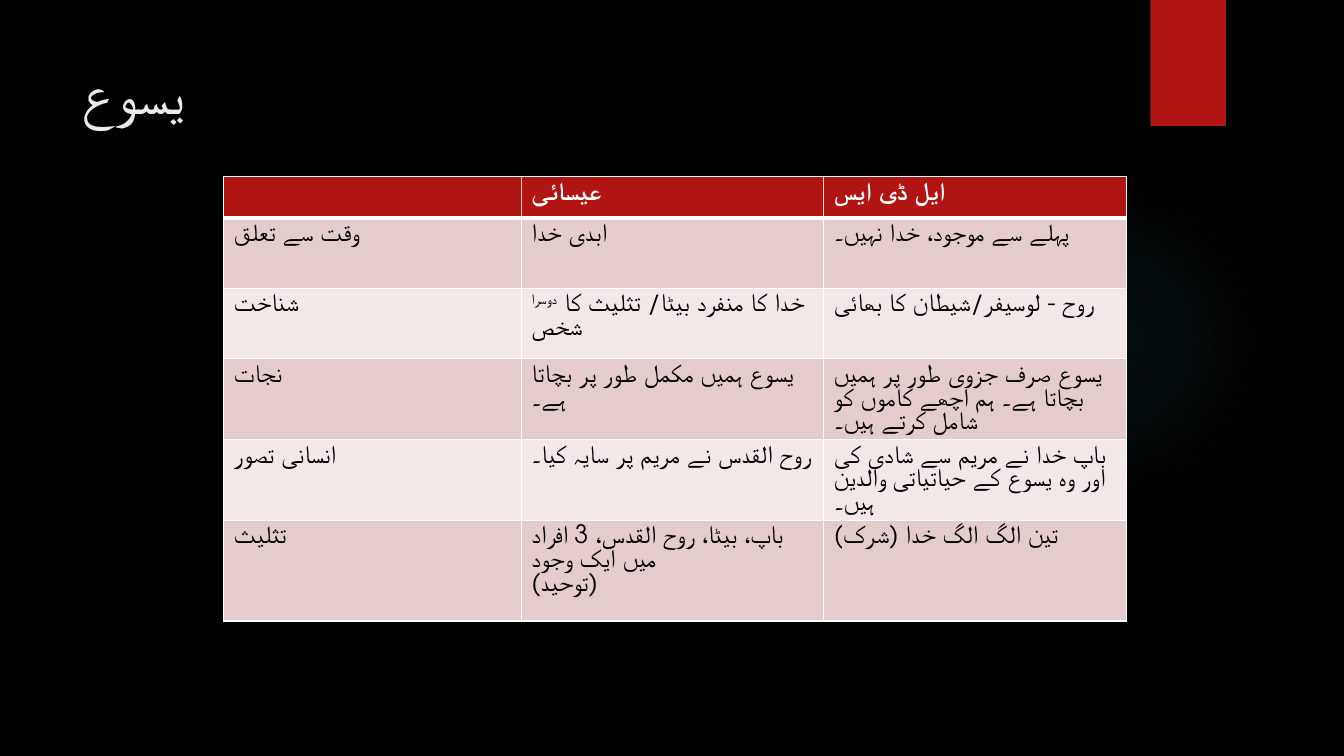
import pptx
import pptx.util
import pptx.dml.color
import pptx.enum.shapes
import pptx.enum.text
import pptx.oxml
import pptx.oxml.ns
from dataclasses import dataclass

TITLE = "یسوع"
# Each cell is a list of paragraphs; each paragraph is a list of (text, superscript) spans or plain strings.
ROWS = [
    ([], [["عیسائی"]], [["ایل ڈی ایس"]]),
    ([["وقت سے تعلق"]], [["ابدی خدا"]], [["پہلے سے موجود، خدا نہیں۔"]]),
    ([["شناخت"]],
     [["خدا کا منفرد بیٹا/ تثلیث کا ", ("دوسرا ", True), "شخص"]],
     [["روح - لوسیفر/شیطان کا بھائی"]]),
    ([["نجات"]],
     [["یسوع ہمیں مکمل طور پر بچاتا ہے۔"]],
     [["یسوع صرف جزوی طور پر ہمیں بچاتا ہے۔ ہم اچھے کاموں کو شامل کرتے ہیں۔"]]),
    ([["انسانی تصور"]],
     [["روح القدس نے مریم پر سایہ کیا۔"]],
     [["باپ خدا نے مریم سے شادی کی اور وہ یسوع کے حیاتیاتی والدین ہیں۔"]]),
    ([["تثلیث"]],
     [["باپ، بیٹا، روح القدس، 3 افراد میں ایک وجود"], ["(توحید)"]],
     [["تین الگ الگ خدا (شرک)"]]),
]
COLUMN_WIDTHS = (2.95, 3, 3)
ROW_HEIGHTS = (0.41, 0.7, 0.7, 0.7, 0.7, 1)
TABLE_LEFT, TABLE_TOP = 2.22, 1.75
TITLE_BOX = (0.71, 0.5, 10.29, 1.53)
GLOW_BOX = (9.41, 1.83, 3.08, 3.08)
TAB_BOX = (11.41, 0, 0.75, 1.25)


@dataclass(frozen=True)
class Theme:
    font: str = "TeX Gyre Adventor"
    title_size: int = 42
    cell_size: int = 18
    background: str = "000000"
    title: str = "EBEBEB"
    accent: str = "B01513"
    glow: str = "50B9C1"
    header_text: str = "FFFFFF"
    body_text: str = "000000"
    border: str = "FFFFFF"
    bands: tuple = ("E4CCCC", "F2E8E7")


THEME = Theme()
GLOW_STOPS = ((0, 7), (36, 6), (69, 0))  # position and opacity, in percent


def inches(values):
    return [pptx.util.Inches(value) for value in values]


def color(code):
    return pptx.dml.color.RGBColor.from_string(code)


def xml(text):
    return pptx.oxml.parse_xml(text.replace(">", " " + pptx.oxml.ns.nsdecls("a") + ">", 1))


def add_span(para, text, size, code, bold=False, superscript=False):
    span = para.add_run()
    span.text = text
    span.font.name = THEME.font
    span.font.size = pptx.util.Pt(size)
    span.font.bold = bold
    span.font.color.rgb = color(code)
    properties = span.font._element
    properties.append(xml(f'<a:cs typeface="{THEME.font}"></a:cs>'))
    if superscript:
        properties.set("baseline", "30000")


def add_panel(page, kind, box):
    panel = page.shapes.add_shape(kind, *inches(box))
    panel.shadow.inherit = False
    panel.line.fill.background()
    panel.fill.solid()
    panel.fill.fore_color.rgb = color(THEME.accent)
    return panel


def add_glow(page):
    glow = add_panel(page, pptx.enum.shapes.MSO_SHAPE.OVAL, GLOW_BOX)
    stops = "".join(
        f'<a:gs pos="{position * 1000}"><a:srgbClr val="{THEME.glow}">'
        f'<a:alpha val="{opacity * 1000}"/></a:srgbClr></a:gs>'
        for position, opacity in GLOW_STOPS)
    gradient = xml(
        f'<a:gradFill><a:gsLst>{stops}</a:gsLst><a:path path="circle">'
        '<a:fillToRect l="50000" t="50000" r="50000" b="50000"/></a:path></a:gradFill>')
    properties = glow._element.spPr
    solid = properties.find(pptx.oxml.ns.qn("a:solidFill"))
    properties.replace(solid, gradient)


def add_borders(cell, bottom_width):
    properties = cell._tc.get_or_add_tcPr()
    for side, width in (("L", 1), ("R", 1), ("T", 1), ("B", bottom_width)):
        properties.append(xml(
            f'<a:ln{side} w="{pptx.util.Pt(width)}"><a:solidFill>'
            f'<a:srgbClr val="{THEME.border}"/></a:solidFill></a:ln{side}>'))


def fill_cell(cell, paragraphs, row):
    header = row == 0
    add_borders(cell, 3 if header else 1)
    cell.fill.solid()
    cell.fill.fore_color.rgb = color(THEME.accent if header else THEME.bands[(row - 1) % 2])
    frame = cell.text_frame
    for index, spans in enumerate(paragraphs):
        para = frame.add_paragraph() if index else frame.paragraphs[0]
        for span in spans:
            text, superscript = (span, False) if isinstance(span, str) else span
            add_span(para, text, THEME.cell_size,
                     THEME.header_text if header else THEME.body_text, header, superscript)


def add_comparison(page):
    table = page.shapes.add_table(
        len(ROWS), len(COLUMN_WIDTHS),
        *inches((TABLE_LEFT, TABLE_TOP, sum(COLUMN_WIDTHS), sum(ROW_HEIGHTS)))).table
    for column, width in zip(table.columns, inches(COLUMN_WIDTHS)):
        column.width = width
    for row, height in zip(table.rows, inches(ROW_HEIGHTS)):
        row.height = height
    for row, cells in enumerate(ROWS):
        for column, paragraphs in enumerate(cells):
            fill_cell(table.cell(row, column), paragraphs, row)


def add_title(page):
    title = page.shapes.title
    title.left, title.top, title.width, title.height = inches(TITLE_BOX)
    frame = title.text_frame
    frame.word_wrap = True
    frame.vertical_anchor = pptx.enum.text.MSO_ANCHOR.TOP
    para = frame.paragraphs[0]
    para.alignment = pptx.enum.text.PP_ALIGN.LEFT
    add_span(para, TITLE, THEME.title_size, THEME.title)


def main():
    deck = pptx.Presentation()
    deck.slide_width, deck.slide_height = inches((13.33, 7.5))
    page = deck.slides.add_slide(deck.slide_layouts.get_by_name("Title Only"))
    page.background.fill.solid()
    page.background.fill.fore_color.rgb = color(THEME.background)
    add_glow(page)
    add_panel(page, pptx.enum.shapes.MSO_SHAPE.RECTANGLE, TAB_BOX)
    add_title(page)
    add_comparison(page)
    deck.save("out.pptx")


if __name__ == "__main__":
    main()
